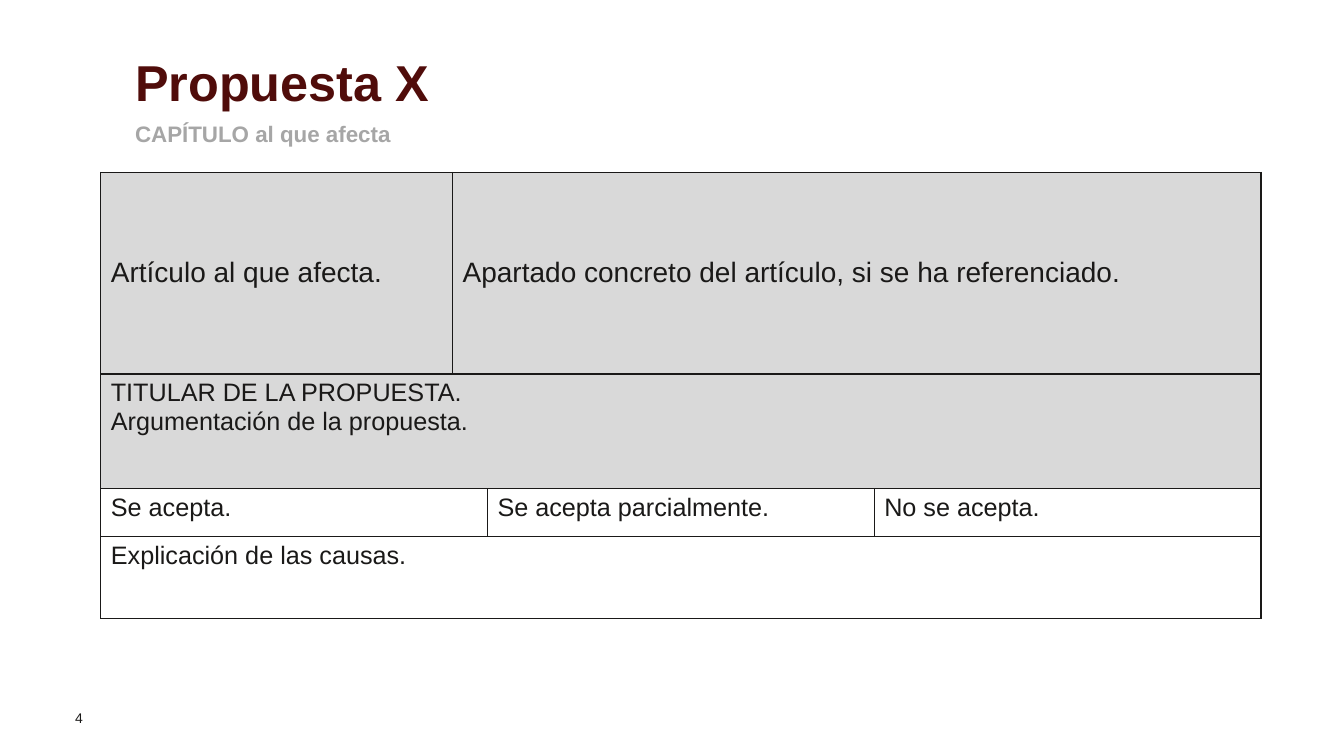
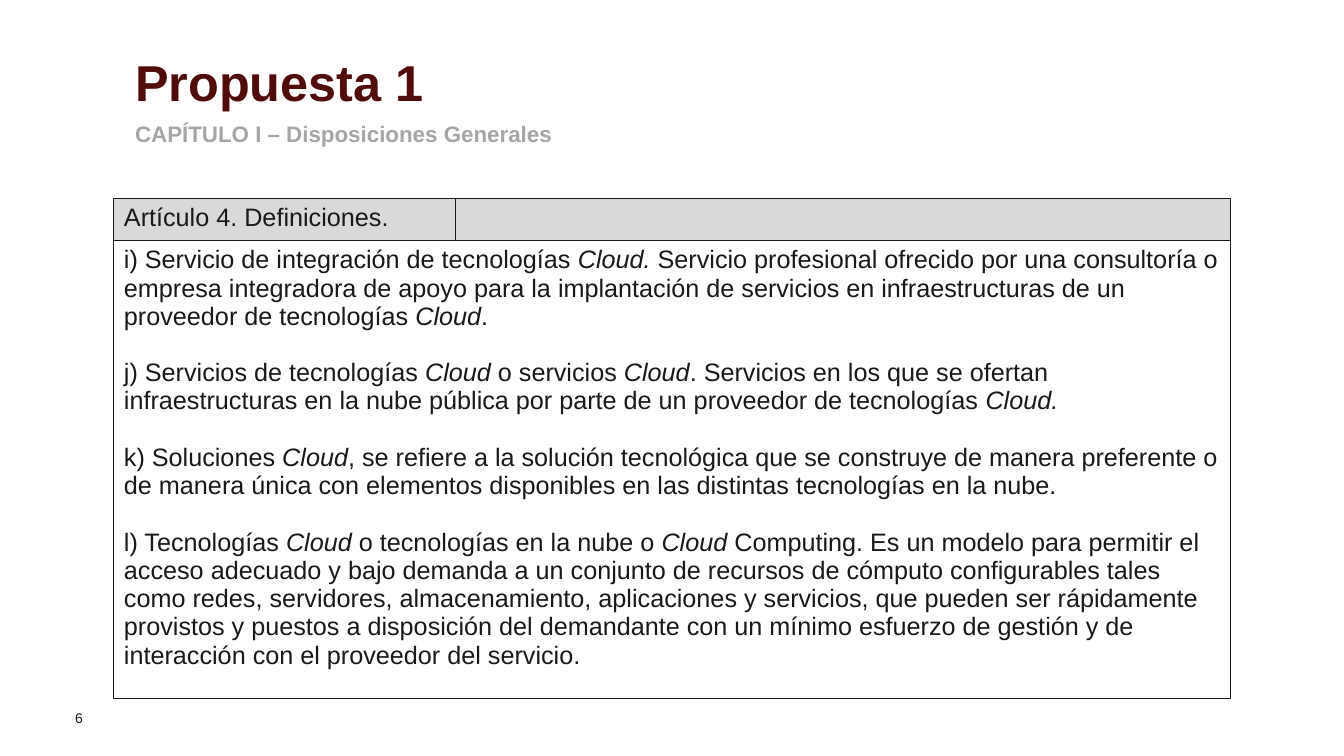
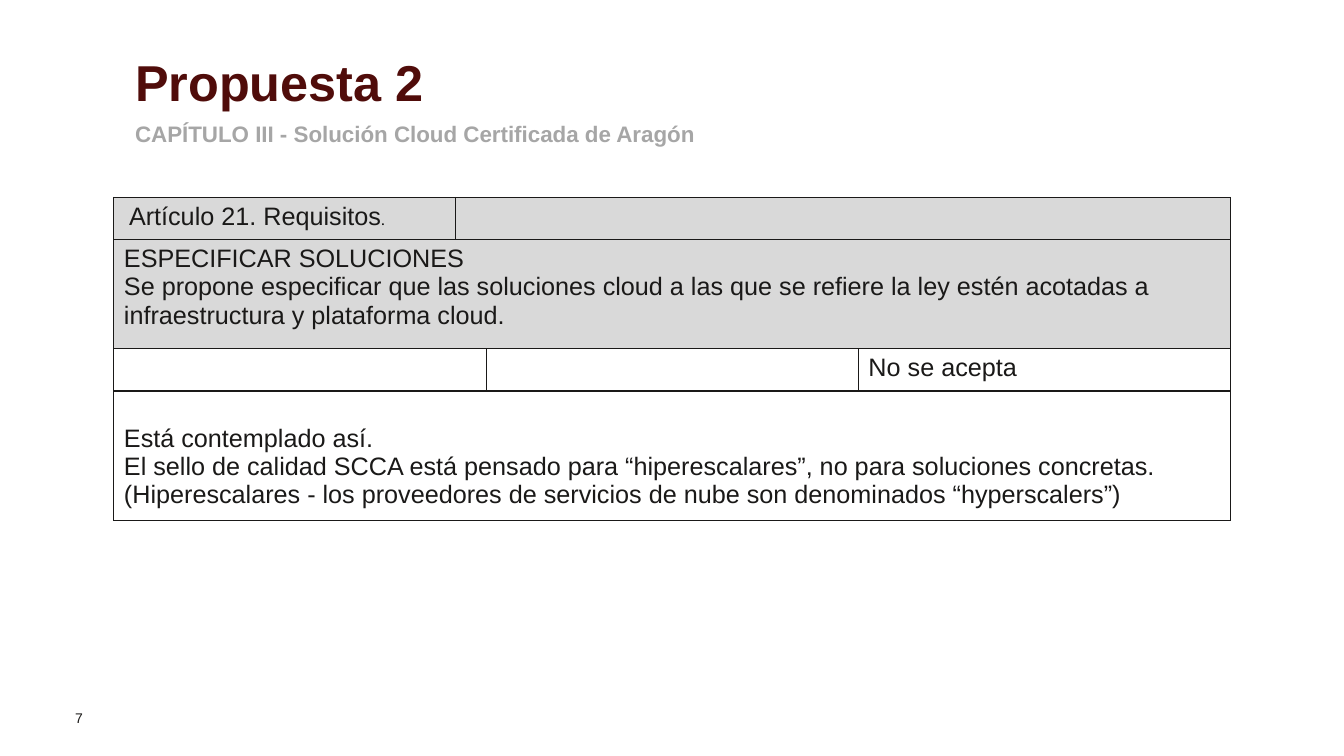
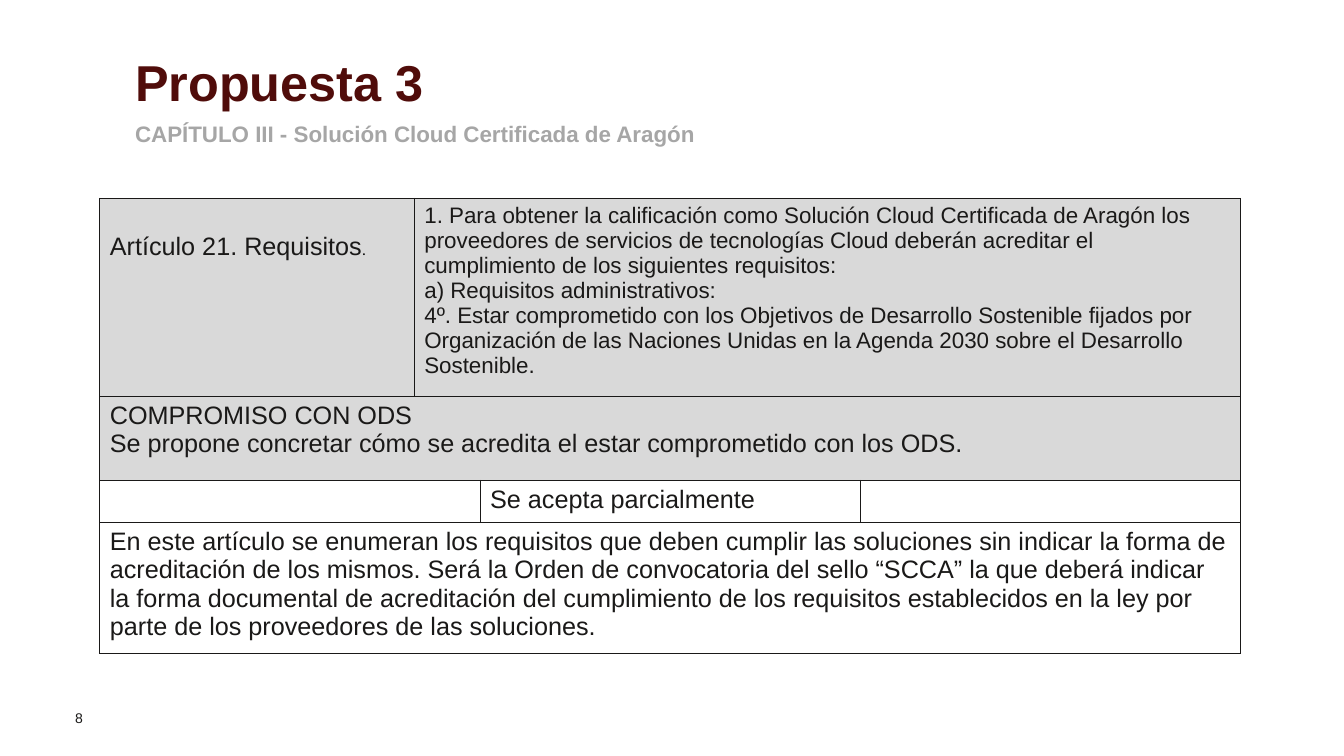
from dataclasses import dataclass
from typing import Any, NamedTuple

from lxml.etree import SubElement
from pptx import Presentation
from pptx.dml.color import RGBColor
from pptx.enum.text import MSO_ANCHOR as Anchor, PP_ALIGN as Align
from pptx.oxml.ns import qn
from pptx.util import Emu, Inches, Pt

# Grid: the slide is 80 columns by 45 rows of square cells
COLUMNS, ROWS = 80, 45
UNIT = Inches(7.5) / ROWS

# Shared look
FONT = "Arial"
INK, MAROON, MUTED, SHADE, BLACK = "1A1918", "500C0A", "A6A6A6", "D9D9D9", "000000"
BODY_SIZE = 18
BLANK_LINE = 20.2


class Area(NamedTuple):
    left: float
    top: float
    width: float
    height: float


TITLE_AREA = Area(8.04, 3.18, 63.78, 3.9)
CHAPTER_AREA = Area(8.04, 7.08, 63.78, 4.74)
NUMBER_AREA = Area(0, 41.58, 5.52, 2.34)
HEADING_FRAME = {"margin_left": 0, "margin_right": 0, "word_wrap": True,
                 "vertical_anchor": Anchor.TOP}
HEADING_LINE = {"alignment": Align.LEFT, "line_spacing": 0.9}

# First grid column of each cell in the three kinds of table row
ARTICLE, FULL, VERDICT = (0, 1), (0,), (0, 2, 3)


class Span(NamedTuple):
    text: str
    italic: bool = False
    size: float = BODY_SIZE
    font: str = FONT
    color: str = INK
    bold: bool = False


Paragraph = tuple[Span, ...]


@dataclass(frozen=True)
class Cell:
    paragraphs: tuple[Paragraph, ...] = ()
    gap: float = 0
    inset_left: float = 0.6
    inset_top: float = 0.3
    anchor: Any = Anchor.TOP


@dataclass(frozen=True)
class Row:
    height: float
    starts: tuple[int, ...]
    cells: tuple[Cell, ...]
    shaded: bool = False


@dataclass(frozen=True)
class Proposal:
    number: str
    title: str
    chapter: str
    left: float
    top: float
    width: float
    article_width: float
    rows: tuple[Row, ...]

    def column_widths(self) -> list[float]:
        third = self.width / 3
        if any(row.starts == VERDICT for row in self.rows):
            return [self.article_width, third - self.article_width, third, third]
        return [self.article_width, self.width - self.article_width]


def prose(*texts: str, size: float = BODY_SIZE, **layout: Any) -> Cell:
    """One paragraph per text; words between asterisks are italic."""
    return Cell(tuple(
        tuple(Span(part, index % 2 == 1, size)
              for index, part in enumerate(text.split("*")) if part)
        for text in texts), **layout)


def grid(length: float) -> Emu:
    return Emu(round(length * UNIT))


def rgb(value: str) -> RGBColor:
    return RGBColor.from_string(value)


def apply(target: Any, values: dict[str, Any]) -> None:
    for name, value in values.items():
        setattr(target, name, value)


def write(para: Any, spans: Paragraph) -> None:
    for span in spans:
        run = para.add_run()
        run.text = span.text
        apply(run.font, {"name": span.font, "size": Pt(span.size),
                         "bold": span.bold, "italic": span.italic})
        run.font.color.rgb = rgb(span.color)


# Title, chapter and page number
def place(box: Any, area: Area) -> None:
    for name, length in area._asdict().items():
        setattr(box, name, grid(length))


def add_line(box: Any, span: Span, frame: dict[str, Any], line: dict[str, Any]) -> None:
    apply(box.text_frame, frame)
    para = box.text_frame.paragraphs[0]
    apply(para, line)
    write(para, (span,))


def add_heading(page: Any, proposal: Proposal) -> None:
    title = page.shapes.title
    place(title, TITLE_AREA)
    add_line(title, Span(proposal.title, size=36, color=MAROON, bold=True),
             HEADING_FRAME, HEADING_LINE)
    chapter = page.shapes.add_textbox(*map(grid, CHAPTER_AREA))
    add_line(chapter, Span(proposal.chapter, size=16, color=MUTED, bold=True),
             HEADING_FRAME | {"margin_top": Inches(0.04)}, HEADING_LINE)
    number = page.shapes.add_textbox(*map(grid, NUMBER_AREA))
    add_line(number, Span(proposal.number, size=10),
             {"word_wrap": True, "vertical_anchor": Anchor.MIDDLE},
             {"alignment": Align.RIGHT})


# Table
def add_borders(cell: Any) -> None:
    properties = cell._tc.get_or_add_tcPr()
    for side in ("lnL", "lnR", "lnT", "lnB"):
        line = SubElement(properties, qn(f"a:{side}"), w=str(Pt(1)))
        fill = SubElement(line, qn("a:solidFill"))
        SubElement(fill, qn("a:srgbClr"), val=INK)


def fill_cell(cell: Any, content: Cell) -> None:
    apply(cell, {"margin_left": grid(content.inset_left),
                 "margin_top": grid(content.inset_top),
                 "vertical_anchor": content.anchor})
    for index, spans in enumerate(content.paragraphs):
        frame = cell.text_frame
        para = frame.add_paragraph() if index else frame.paragraphs[0]
        if index and content.gap:
            para.space_before = Pt(content.gap)
        write(para, spans)


def add_proposal_table(page: Any, proposal: Proposal) -> None:
    widths = proposal.column_widths()
    height = sum(row.height for row in proposal.rows)
    area = Area(proposal.left, proposal.top, proposal.width, height)
    table = page.shapes.add_table(
        len(proposal.rows), len(widths), *map(grid, area)).table
    apply(table, {"first_row": False, "horz_banding": False})
    for column, width in zip(table.columns, widths):
        column.width = grid(width)
    for row_index, row in enumerate(proposal.rows):
        table.rows[row_index].height = grid(row.height)
        for column_index in range(len(widths)):
            cell = table.cell(row_index, column_index)
            add_borders(cell)
            if row.shaded:
                cell.fill.solid()
                cell.fill.fore_color.rgb = rgb(SHADE)
            else:
                cell.fill.background()
        ends = (*row.starts[1:], len(widths))
        for start, end, content in zip(row.starts, ends, row.cells):
            cell = table.cell(row_index, start)
            if end - start > 1:
                cell.merge(table.cell(row_index, end - 1))
            fill_cell(cell, content)


# Content
EMPTY = Cell()
CERTIFIED = "CAPÍTULO III - Solución Cloud Certificada de Aragón"
REQUIREMENTS = ((Span("Artículo 21. Requisitos"),
                 Span(".", size=11, font="Calibri", color=BLACK)),)

PROPOSALS = (
    Proposal("4", "Propuesta X", "CAPÍTULO al que afecta", 6, 10.26, 69.06, 20.94, (
        Row(12, ARTICLE, (
            prose("Artículo al que afecta.", size=20, anchor=Anchor.MIDDLE),
            prose("Apartado concreto del artículo, si se ha referenciado.",
                  size=20, anchor=Anchor.MIDDLE)), True),
        Row(6.84, FULL, (prose("TITULAR DE LA PROPUESTA.",
                               "Argumentación de la propuesta."),), True),
        Row(2.82, VERDICT, (prose("Se acepta."), prose("Se acepta parcialmente."),
                            prose("No se acepta."))),
        Row(4.92, FULL, (prose("Explicación de las causas."),)),
    )),
    Proposal("6", "Propuesta 1", "CAPÍTULO I – Disposiciones Generales",
             6.78, 11.82, 66.48, 20.34, (
        Row(2.52, ARTICLE, (prose("Artículo 4. Definiciones."), EMPTY), True),
        Row(25.8, FULL, (prose(
            "i) Servicio de integración de tecnologías *Cloud. *Servicio profesional "
            "ofrecido por una consultoría o empresa integradora de apoyo para la "
            "implantación de servicios en infraestructuras de un proveedor de "
            "tecnologías *Cloud*.",
            "j) Servicios de tecnologías *Cloud* o servicios *Cloud*. Servicios en los "
            "que se ofertan infraestructuras en la nube pública por parte de un "
            "proveedor de tecnologías *Cloud.*",
            "k) Soluciones *Cloud*, se refiere a la solución tecnológica que se "
            "construye de manera preferente o de manera única con elementos "
            "disponibles en las distintas tecnologías en la nube.",
            "l) Tecnologías *Cloud *o tecnologías en la nube o *Cloud *Computing. Es un "
            "modelo para permitir el acceso adecuado y bajo demanda a un conjunto de "
            "recursos de cómputo configurables tales como redes, servidores, "
            "almacenamiento, aplicaciones y servicios, que pueden ser rápidamente "
            "provistos y puestos a disposición del demandante con un mínimo esfuerzo "
            "de gestión y de interacción con el proveedor del servicio.",
            gap=BLANK_LINE),)),
    )),
    Proposal("7", "Propuesta 2", CERTIFIED, 6.78, 11.76, 66.48, 20.34, (
        Row(2.52, ARTICLE, (Cell(REQUIREMENTS, inset_left=0.9), EMPTY), True),
        Row(6.48, FULL, (prose(
            "ESPECIFICAR SOLUCIONES",
            "Se propone especificar que las soluciones cloud a las que se refiere la "
            "ley estén acotadas a infraestructura y plataforma cloud."),), True),
        Row(2.52, VERDICT, (EMPTY, EMPTY, prose("No se acepta"))),
        Row(7.32, FULL, (prose(
            "Está contemplado así.",
            "El sello de calidad SCCA está pensado para “hiperescalares”, no para "
            "soluciones concretas.",
            "(Hiperescalares - los proveedores de servicios de nube son denominados "
            "“hyperscalers”)", inset_top=2),)),
    )),
    Proposal("8", "Propuesta 3", CERTIFIED, 5.94, 11.82, 67.92, 18.72, (
        Row(10.98, ARTICLE, (Cell(REQUIREMENTS, inset_top=2), prose(
            "1. Para obtener la calificación como Solución Cloud Certificada de Aragón "
            "los proveedores de servicios de tecnologías Cloud deberán acreditar el "
            "cumplimiento de los siguientes requisitos:",
            "a) Requisitos administrativos:",
            "4º. Estar comprometido con los Objetivos de Desarrollo Sostenible fijados "
            "por Organización de las Naciones Unidas en la Agenda 2030 sobre el "
            "Desarrollo Sostenible.", size=16)), True),
        Row(4.98, FULL, (prose(
            "COMPROMISO CON ODS",
            "Se propone concretar cómo se acredita el estar comprometido con los "
            "ODS."),), True),
        Row(2.52, VERDICT, (EMPTY, prose("Se acepta parcialmente"), EMPTY)),
        Row(7.32, FULL, (prose(
            "En este artículo se enumeran los requisitos que deben cumplir las "
            "soluciones sin indicar la forma de acreditación de los mismos. Será la "
            "Orden de convocatoria del sello “SCCA” la que deberá indicar la forma "
            "documental de acreditación del cumplimiento de los requisitos "
            "establecidos en la ley por parte de los proveedores de las "
            "soluciones."),)),
    )),
)


def main() -> None:
    deck = Presentation()
    apply(deck, {"slide_width": grid(COLUMNS), "slide_height": grid(ROWS)})
    title_only = deck.slide_layouts[5]
    for proposal in PROPOSALS:
        page = deck.slides.add_slide(title_only)
        add_heading(page, proposal)
        add_proposal_table(page, proposal)
    deck.save("out.pptx")


if __name__ == "__main__":
    main()
